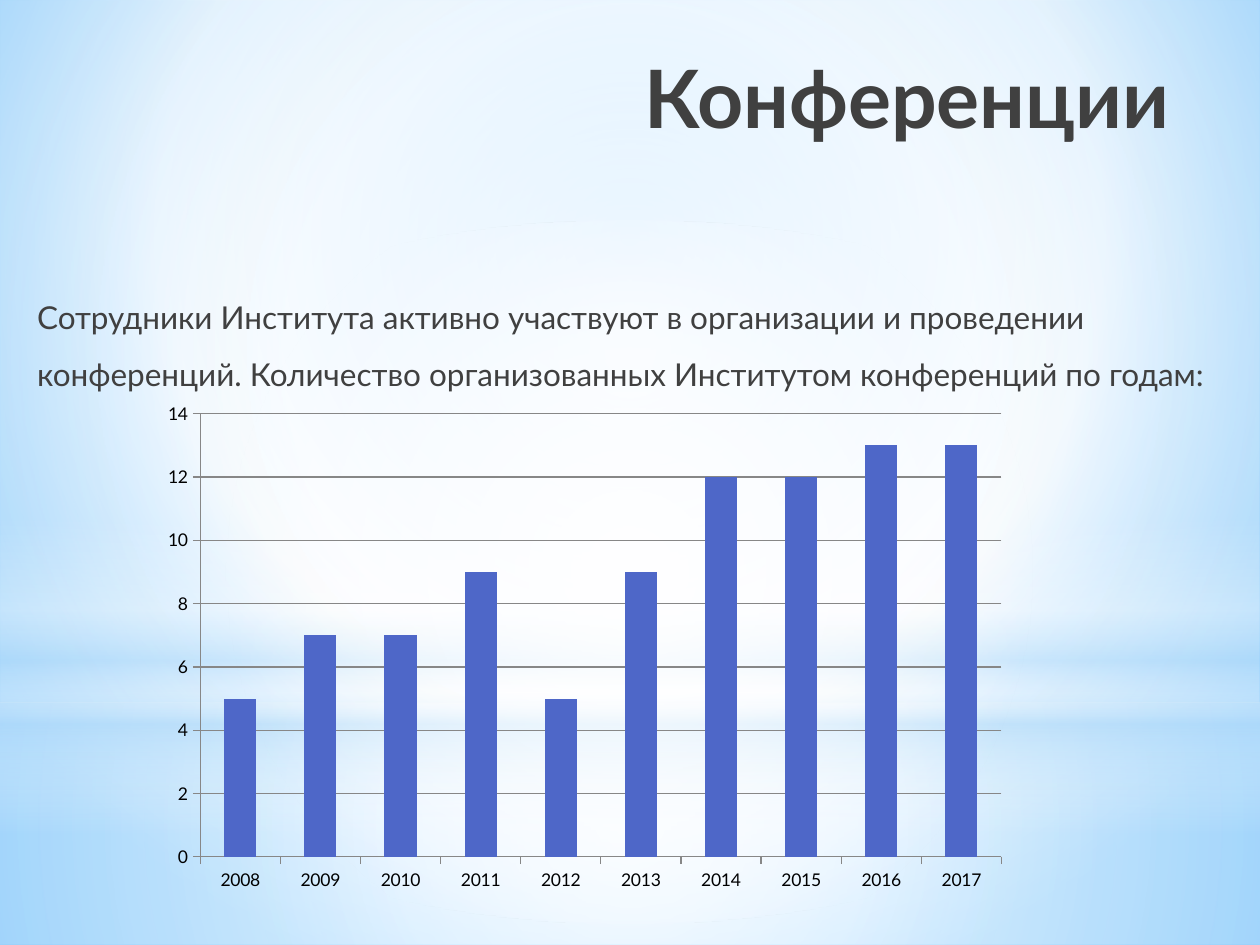
"""Build the slide on conferences by year."""
from pptx import Presentation
from pptx import util as u
from pptx.chart.data import CategoryChartData
from pptx.dml.color import RGBColor
from pptx.enum import chart as ch, shapes, text
from pptx.oxml import parse_xml
from pptx.oxml.ns import nsdecls, qn

WHITE = RGBColor(0xFF, 0xFF, 0xFF)
BLACK = RGBColor(0, 0, 0)
SKY = RGBColor(0x9E, 0xD5, 0xFF)
BLUE = RGBColor(0x5B, 0xB9, 0xFF)
PALE = RGBColor(0xB4, 0xDC, 0xFA)
DARK = RGBColor(0x40, 0x40, 0x40)
GREY = RGBColor(0x87, 0x87, 0x87)
BAR = RGBColor(0x4E, 0x67, 0xC8)
FONT = "Lato"
MID = (50, 50, 50, 50)


def paint(fill, root, stops, rect):
    fill.gradient()
    old = root.find(".//" + qn("a:gradFill"))
    marks = "".join(
        f'<a:gs pos="{pos * 1000}"><a:srgbClr val="{tone}">'
        f'<a:alpha val="{alpha * 1000}"/></a:srgbClr></a:gs>'
        for pos, tone, alpha in stops)
    if rect:
        sides = " ".join(f'{k}="{v * 1000}"' for k, v in zip("ltrb", rect))
        way = f'<a:path path="circle"><a:fillToRect {sides}/></a:path>'
    else:
        way = '<a:lin ang="5400000" scaled="0"/>'
    new = parse_xml(f'<a:gradFill {nsdecls("a")} rotWithShape="1">'
                    f'<a:gsLst>{marks}</a:gsLst>{way}</a:gradFill>')
    old.getparent().replace(old, new)


def style(obj, form):
    for key, val in form.items():
        setattr(obj, key, val)


deck = Presentation()
style(deck, {"slide_width": u.Cm(25.4), "slide_height": u.Cm(19.05)})
slide = deck.slides.add_slide(deck.slide_layouts[6])
paint(slide.background.fill, slide.element,
      [(0, SKY, 100), (60, WHITE, 100), (100, BLUE, 100)], (20, 10, 20, 60))

RECT, OVAL = shapes.MSO_SHAPE.RECTANGLE, shapes.MSO_SHAPE.OVAL
glows = [
    (RECT, 14.17, 4.88, MID,
     [(0, WHITE, 91), (37, WHITE, 76), (100, PALE, 79)]),
    (RECT, 0, 14.17, MID,
     [(0, WHITE, 89), (48, WHITE, 62), (100, PALE, 79)]),
    (RECT, 10.46, 6.35, None,
     [(0, WHITE, 0), (29, WHITE, 30), (45, PALE, 40),
      (55, WHITE, 26), (65, PALE, 60), (100, WHITE, 0)]),
    (OVAL, 4.45, 14.17, MID, [(0, WHITE, 100), (56, WHITE, 0)]),
]
for kind, top, high, rect, stops in glows:
    glow = slide.shapes.add_shape(kind, 0, u.Cm(top), deck.slide_width, u.Cm(high))
    glow.shadow.inherit = False
    glow.line.fill.background()
    paint(glow.fill, glow.element, stops, rect)

right, left = text.PP_ALIGN.RIGHT, text.PP_ALIGN.LEFT
notes = [
    ((6.6, 0.84, 17.22, 3.38), "Конференции",
     {"size": u.Pt(46), "bold": True}, {"alignment": right}),
    ((0.5, 5.5, 24.4, 2.6),
     "Сотрудники Института активно участвуют в организации и проведении "
     "конференций. Количество организованных Институтом конференций по годам:",
     {"size": u.Pt(18), "bold": False}, {"alignment": left, "line_spacing": 1.5}),
]
for place, words, face, form in notes:
    box = slide.shapes.add_textbox(*map(u.Cm, place))
    box.text_frame.word_wrap = True
    para = box.text_frame.paragraphs[0]
    para.text = words
    style(para, form)
    style(para.font, {"name": FONT, **face})
    para.font.color.rgb = DARK

data = CategoryChartData()
data.categories = [str(year) for year in range(2008, 2018)]
data.add_series("Series 1", (5, 7, 7, 9, 5, 9, 12, 12, 13, 13))
chart = slide.shapes.add_chart(
    ch.XL_CHART_TYPE.COLUMN_CLUSTERED,
    *map(u.Cm, (3.15, 8.13, 17.75, 10.39)), data).chart
style(chart, {"has_legend": False, "has_title": False})
style(chart.font, {"name": FONT, "size": u.Pt(10)})
chart.font.color.rgb = BLACK
plot = chart.plots[0]
style(plot, {"gap_width": 150, "vary_by_categories": False})
bars = plot.series[0].format.fill
bars.solid()
bars.fore_color.rgb = BAR

cat, val = chart.category_axis, chart.value_axis
style(val, {"minimum_scale": 0, "maximum_scale": 14, "major_unit": 2,
            "has_major_gridlines": True})
for axis in (cat, val):
    axis.major_tick_mark = ch.XL_TICK_MARK.OUTSIDE
for part in (cat, val, val.major_gridlines):
    part.format.line.color.rgb = GREY
    part.format.line.width = u.Pt(0.75)

area = chart.element.find(".//" + qn("c:plotArea"))
for old in area.findall(qn("c:layout")):
    area.remove(old)
sizes = "".join(f'<c:{k} val="{v}"/>' for k, v in
                zip("xywh", (0.05, 0.02, 0.91, 0.86)))
area.insert(0, parse_xml(
    f'<c:layout {nsdecls("c")}><c:manualLayout><c:layoutTarget val="inner"/>'
    f'<c:xMode val="edge"/><c:yMode val="edge"/>{sizes}'
    '</c:manualLayout></c:layout>'))

deck.save("out.pptx")
